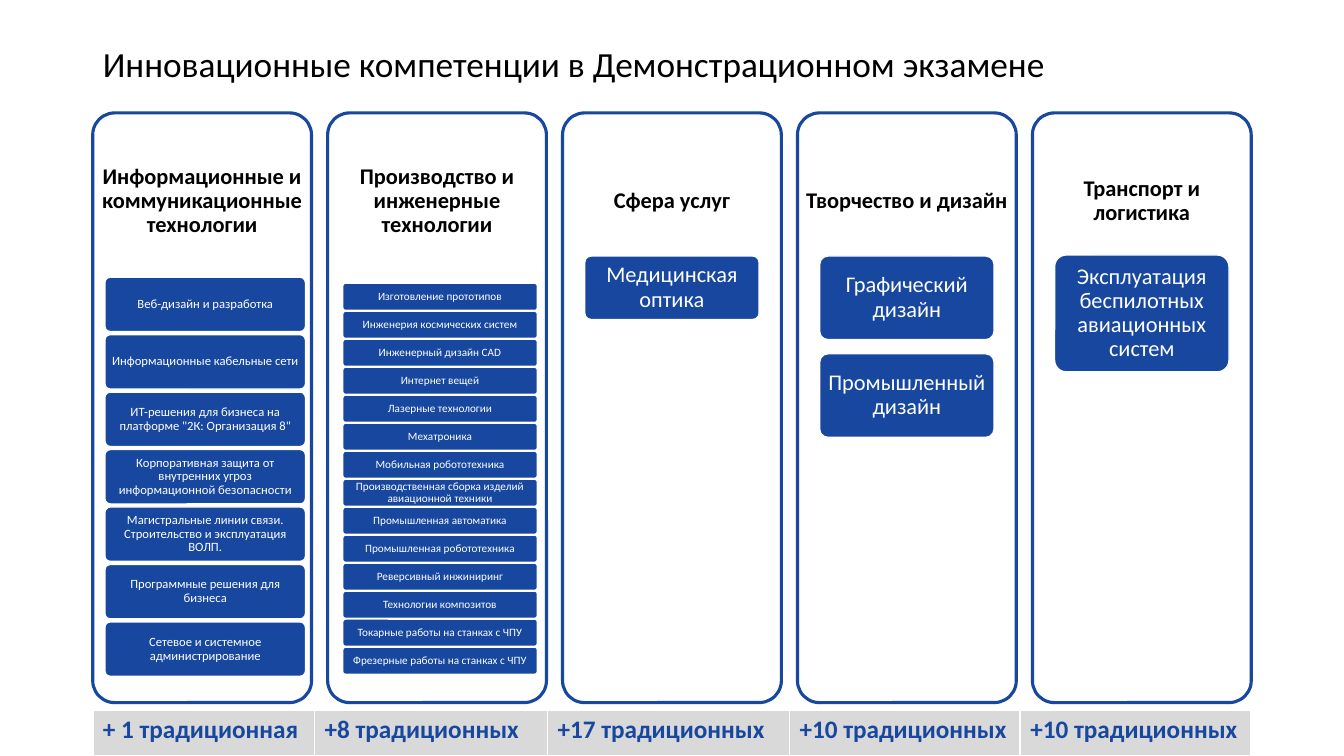
from pptx import Presentation
from pptx.dml.color import RGBColor
from pptx.enum.shapes import MSO_SHAPE
from pptx.enum.text import MSO_ANCHOR, MSO_AUTO_SIZE, PP_ALIGN
from pptx.oxml import parse_xml
from pptx.oxml.ns import nsdecls
from pptx.util import Inches, Pt

BLUE = RGBColor(0x17, 0x47, 0x9E)
BLACK = RGBColor(0, 0, 0)
WHITE = RGBColor(0xFF, 0xFF, 0xFF)
GREY = RGBColor(0xD9, 0xD9, 0xD9)

LEFT, TOP, WIDTH = 0.92, 1.12, 11.5
PANEL_W, PANEL_H, PANEL_PITCH, HEADING_H = 2.17, 5.85, 2.33, 1.76

SMALL = {"indent": 0.12, "width": 1.99, "height": 0.54, "size": 9, "inset": (0.03, 0.02)}
TINY = {"indent": 0.15, "width": 1.93, "height": 0.27, "size": 8, "inset": (0.02, 0.02)}
LARGE = {"indent": 0.22, "width": 1.73, "size": 16, "inset": (0.04, 0.03)}

FIELDS = [
    ("Информационные и коммуникационные технологии", SMALL, 2.75, 6.17, [
        "Веб-дизайн и разработка",
        "Информационные кабельные сети",
        'ИТ-решения для бизнеса на платформе "2К: Организация 8"',
        "Корпоративная защита от внутренних угроз информационной безопасности",
        "Магистральные линии связи. Строительство и эксплуатация ВОЛП.",
        "Программные решения для бизнеса",
        "Сетевое и системное администрирование",
    ]),
    ("Производство и инженерные технологии", TINY, 2.81, 6.42, [
        "Изготовление прототипов",
        "Инженерия космических систем",
        "Инженерный дизайн CAD",
        "Интернет вещей",
        "Лазерные технологии",
        "Мехатроника",
        "Мобильная робототехника",
        "Производственная сборка изделий авиационной техники",
        "Промышленная автоматика",
        "Промышленная робототехника",
        "Реверсивный инжиниринг",
        "Технологии композитов",
        "Токарные работы на станках с ЧПУ",
        "Фрезерные работы на станках с ЧПУ",
    ]),
    ("Сфера услуг", {**LARGE, "height": 0.63}, 2.54, 2.54, ["Медицинская оптика"]),
    ("Творчество и дизайн", {**LARGE, "height": 0.83}, 2.54, 3.51,
     ["Графический дизайн", "Промышленный дизайн"]),
    ("Транспорт и логистика", {**LARGE, "height": 1.16}, 2.53, 2.53,
     ["Эксплуатация беспилотных авиационных систем"]),
]

TRADITIONAL = [
    ("+ 1 традиционная", 2.2),
    ("+8 традиционных", 2.31),
    ("+17 традиционных", 2.4),
    ("+10 традиционных", 2.29),
    ("+10 традиционных", 2.29),
]


def set_attrs(obj, values):
    for name, value in values.items():
        setattr(obj, name, value)


def write(tf, text, size, color, bold=False, align=PP_ALIGN.CENTER, spacing=0.9):
    p = tf.paragraphs[0]
    set_attrs(p, {"alignment": align, "line_spacing": spacing})
    r = p.add_run()
    r.text = text
    set_attrs(r.font, {"name": "Calibri", "size": Pt(size), "bold": bold})
    r.font.color.rgb = color


def format_frame(tf, inset_x, inset_y):
    set_attrs(tf, {
        "word_wrap": True,
        "auto_size": MSO_AUTO_SIZE.NONE,
        "vertical_anchor": MSO_ANCHOR.MIDDLE,
        "margin_left": Inches(inset_x),
        "margin_right": Inches(inset_x),
        "margin_top": Inches(inset_y),
        "margin_bottom": Inches(inset_y),
    })


def add_title(s, text):
    sp = s.shapes.title
    set_attrs(sp, {"left": Inches(LEFT), "top": Inches(0.4),
                   "width": Inches(WIDTH), "height": Inches(0.51)})
    format_frame(sp.text_frame, 0.1, 0.05)
    write(sp.text_frame, text, 25.2, BLACK, align=PP_ALIGN.LEFT)


def add_rounded(s, x, y, w, h, line_color, line_width):
    sp = s.shapes.add_shape(MSO_SHAPE.ROUNDED_RECTANGLE,
                            Inches(x), Inches(y), Inches(w), Inches(h))
    sp.adjustments[0] = 0.1
    sp.shadow.inherit = False
    sp.line.color.rgb = line_color
    sp.line.width = Pt(line_width)
    return sp


def add_panel(s, x, heading):
    add_rounded(s, x, TOP, PANEL_W, PANEL_H, BLUE, 2.25).fill.background()
    box = s.shapes.add_textbox(Inches(x), Inches(TOP), Inches(PANEL_W), Inches(HEADING_H))
    format_frame(box.text_frame, 0.07, 0.07)
    write(box.text_frame, heading, 16, BLACK, bold=True)


def add_cards(s, x, style, first, last, names):
    pitch = (last - first) / max(len(names) - 1, 1)
    for i, name in enumerate(names):
        sp = add_rounded(s, x + style["indent"], first + i * pitch,
                         style["width"], style["height"], WHITE, 1)
        sp.fill.solid()
        sp.fill.fore_color.rgb = BLUE
        format_frame(sp.text_frame, *style["inset"])
        write(sp.text_frame, name, style["size"], WHITE)


def add_borders(cell):
    tcPr = cell._tc.get_or_add_tcPr()
    for i, side in enumerate(("lnL", "lnR", "lnT", "lnB")):
        tcPr.insert(i, parse_xml(
            f'<a:{side} {nsdecls("a")} w="{Pt(1.5)}"><a:solidFill>'
            f'<a:srgbClr val="{WHITE}"/></a:solidFill></a:{side}>'))


def add_traditional_table(s):
    table = s.shapes.add_table(1, len(TRADITIONAL), Inches(LEFT), Inches(7.04),
                               Inches(WIDTH), Inches(0.46)).table
    set_attrs(table, {"first_row": False, "horz_banding": False})
    for i, (text, width) in enumerate(TRADITIONAL):
        table.columns[i].width = Inches(width)
        cell = table.cell(0, i)
        cell.fill.solid()
        cell.fill.fore_color.rgb = GREY
        write(cell.text_frame, text, 18, BLUE, bold=True, align=PP_ALIGN.LEFT, spacing=1.0)
        add_borders(cell)


def main():
    prs = Presentation()
    set_attrs(prs, {"slide_width": Inches(13.33), "slide_height": Inches(7.5)})
    s = prs.slides.add_slide(prs.slide_layouts[5])
    add_title(s, "Инновационные компетенции в Демонстрационном экзамене")
    for i, (heading, style, first, last, names) in enumerate(FIELDS):
        x = LEFT + i * PANEL_PITCH
        add_panel(s, x, heading)
        add_cards(s, x, style, first, last, names)
    add_traditional_table(s)
    prs.save("out.pptx")


if __name__ == "__main__":
    main()
